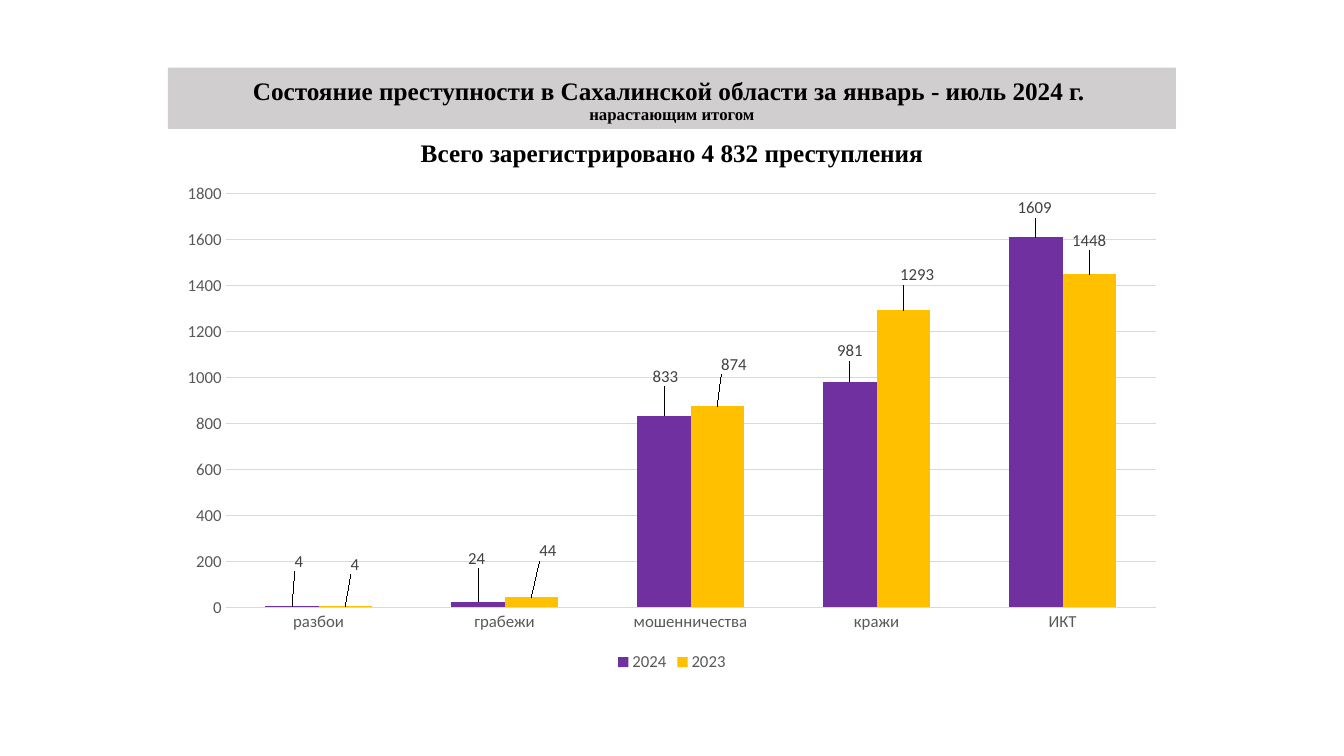
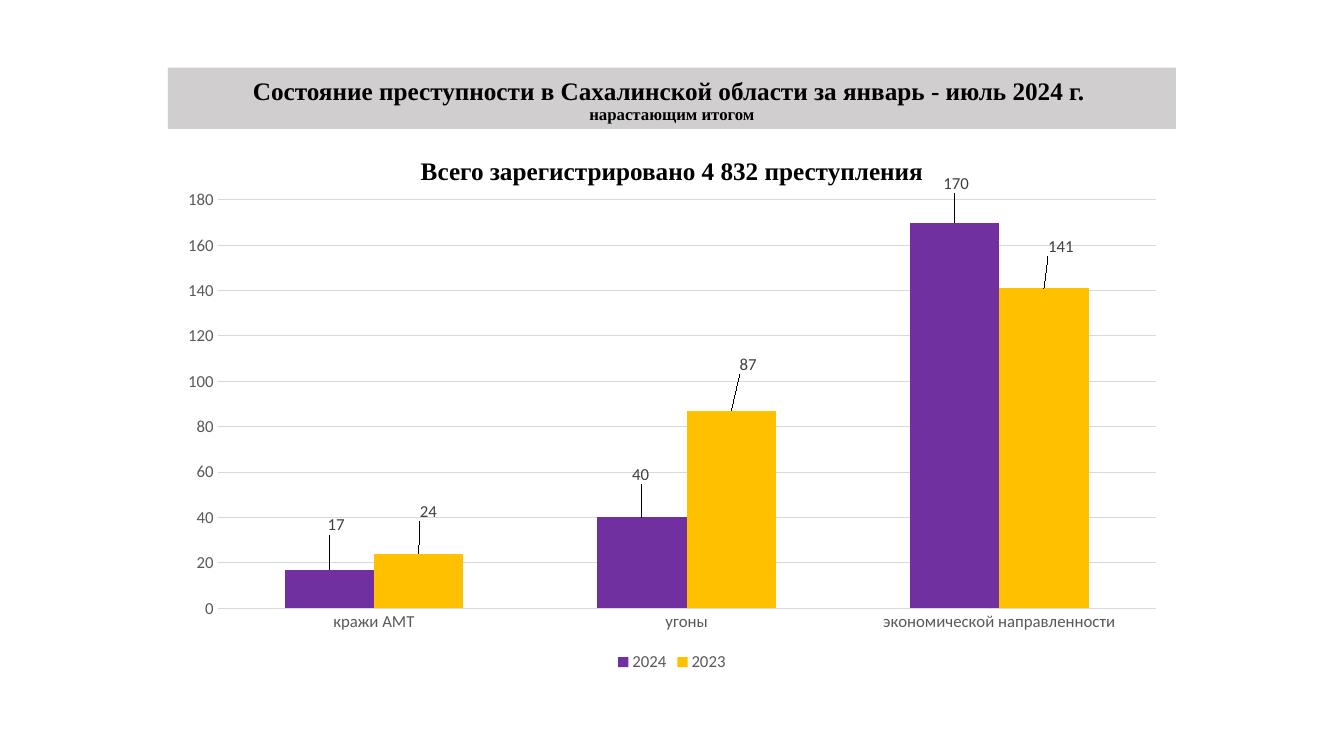
from lxml.etree import SubElement
from pptx import Presentation
from pptx.chart.data import CategoryChartData
from pptx.dml.color import RGBColor
from pptx.enum.chart import XL_CHART_TYPE, XL_LABEL_POSITION, XL_LEGEND_POSITION, XL_TICK_MARK
from pptx.enum.text import MSO_ANCHOR, MSO_AUTO_SIZE, PP_ALIGN
from pptx.oxml import parse_xml
from pptx.oxml.ns import nsdecls, qn
from pptx.util import Pt

BLACK = RGBColor(0x00, 0x00, 0x00)
BAND_GREY = RGBColor(0xD0, 0xCE, 0xCE)
GRID_GREY = RGBColor(0xD9, 0xD9, 0xD9)
AXIS_GREY = RGBColor(0x59, 0x59, 0x59)
LABEL_GREY = RGBColor(0x40, 0x40, 0x40)
PURPLE = RGBColor(0x70, 0x30, 0xA0)
GOLD = RGBColor(0xFF, 0xC0, 0x00)

HEADING_FONT, CHART_FONT = "Times New Roman", "Calibri"

HEADING = [
    ("Состояние преступности в Сахалинской области за январь - июль 2024 г. ", 18),
    ("нарастающим итогом", 12),
]
TOTAL = [("Всего зарегистрировано 4 832 преступления", 18)]

# Each year: bar colour and the shift (right, down) of its value labels in points
YEARS = {
    "2024": (PURPLE, [(5, -22), (-1, -21), (1, -18), (0, -12), (-1, -11)]),
    "2023": (GOLD, [(7, -20), (12, -23), (12, -20), (10, -15), (0, -14)]),
}

# plot: left, top, width, height in points inside the chart
SLIDES = [
    {
        "total_top": 98.5,
        "plot": (41.2, 14.3, 664.3, 295.7),
        "step": 200,
        "top_value": 1800,
        "crimes": {
            "разбои": (4, 4),
            "грабежи": (24, 44),
            "мошенничества": (833, 874),
            "кражи": (981, 1293),
            "ИКТ": (1609, 1448),
        },
    },
    {
        "total_top": 111.5,
        "plot": (35.5, 17.9, 670, 292.5),
        "step": 20,
        "top_value": 180,
        "crimes": {
            "кражи АМТ": (17, 24),
            "угоны": (40, 87),
            "экономической направленности": (170, 141),
        },
    },
]

LEFT, WIDTH = 120, 720
BAND_TOP, BAND_HEIGHT = 48.3, 43.7
TOTAL_HEIGHT = 26
CHART_TOP, CHART_HEIGHT = 124, 359


def style_font(font, size, color, name=CHART_FONT, bold=False):
    font.size, font.name, font.bold = Pt(size), name, bold
    font.color.rgb = color


def place_heading(placeholder, lines, top, height, anchor, line_spacing, space_before):
    placeholder.left, placeholder.top = Pt(LEFT), Pt(top)
    placeholder.width, placeholder.height = Pt(WIDTH), Pt(height)
    frame = placeholder.text_frame
    frame.text = "\n".join(text for text, _ in lines)
    frame.word_wrap = True
    frame.auto_size = MSO_AUTO_SIZE.NONE
    frame.vertical_anchor = anchor
    for paragraph, (_, size) in zip(frame.paragraphs, lines):
        paragraph.alignment = PP_ALIGN.CENTER
        paragraph.line_spacing = line_spacing
        paragraph.space_before = Pt(space_before)
        for run in paragraph.runs:
            style_font(run.font, size, BLACK, HEADING_FONT, bold=True)


def manual_layout(modes, lengths):
    """Chart layout element; lengths are points, stored as shares of the chart size."""
    layout = parse_xml(f"<c:layout {nsdecls('c')}><c:manualLayout/></c:layout>")
    shares = zip("xywh", lengths, (WIDTH, CHART_HEIGHT) * 2)
    values = modes + [(key, f"{length / full:.4f}") for key, length, full in shares]
    for key, value in values:
        SubElement(layout[0], qn(f"c:{key}")).set("val", value)
    return layout


def style_axes(chart, step, top_value):
    for axis in (chart.category_axis, chart.value_axis):
        axis.major_tick_mark = axis.minor_tick_mark = XL_TICK_MARK.NONE
        axis.format.line.fill.background()
        style_font(axis.tick_labels.font, 12, AXIS_GREY)
    values = chart.value_axis
    values.minimum_scale, values.maximum_scale = 0, top_value
    values.major_unit = step
    values.has_major_gridlines = True
    grid_line = values.major_gridlines.format.line
    grid_line.color.rgb = GRID_GREY
    grid_line.width = Pt(0.75)


def style_series(series, color, shifts):
    series.format.fill.solid()
    series.format.fill.fore_color.rgb = color
    series.invert_if_negative = False
    labels = series.data_labels
    labels.show_value = True
    style_font(labels.font, 12, LABEL_GREY)
    for index, shift in enumerate(shifts):
        label = series.points[index].data_label
        style_font(label.font, 12, LABEL_GREY)
        label.position = XL_LABEL_POSITION.OUTSIDE_END
    for label_xml, shift in zip(labels._element.findall(qn("c:dLbl")), shifts):
        label_xml.insert(1, manual_layout([], shift))


def add_crime_chart(slide, content):
    crimes = content["crimes"]
    data = CategoryChartData()
    data.categories = list(crimes)
    for year, counts in zip(YEARS, zip(*crimes.values())):
        data.add_series(year, counts)
    chart = slide.shapes.add_chart(
        XL_CHART_TYPE.COLUMN_CLUSTERED,
        Pt(LEFT), Pt(CHART_TOP), Pt(WIDTH), Pt(CHART_HEIGHT), data,
    ).chart
    style_font(chart.font, 10, BLACK)
    chart.has_title = False
    chart.has_legend = True
    chart.legend.position = XL_LEGEND_POSITION.BOTTOM
    chart.legend.include_in_layout = False
    style_font(chart.legend.font, 12, AXIS_GREY)
    style_axes(chart, content["step"], content["top_value"])

    columns = chart.plots[0]
    columns.gap_width, columns.overlap = 150, 0
    columns.vary_by_categories = False
    for series, (color, shifts) in zip(columns.series, YEARS.values()):
        style_series(series, color, shifts[:len(crimes)])

    plot_area = chart.element.find(f"{qn('c:chart')}/{qn('c:plotArea')}")
    for old_layout in plot_area.findall(qn("c:layout")):
        plot_area.remove(old_layout)
    modes = [("layoutTarget", "inner"), ("xMode", "edge"), ("yMode", "edge")]
    plot_area.insert(0, manual_layout(modes, content["plot"]))


def main():
    deck = Presentation()
    deck.slide_width, deck.slide_height = Pt(960), Pt(540)
    title_and_subtitle = deck.slide_layouts[0]
    for content in SLIDES:
        slide = deck.slides.add_slide(title_and_subtitle)
        band = slide.shapes.title
        place_heading(band, HEADING, BAND_TOP, BAND_HEIGHT, MSO_ANCHOR.BOTTOM, 0.9, 0)
        band.fill.solid()
        band.fill.fore_color.rgb = BAND_GREY
        place_heading(slide.placeholders[1], TOTAL, content["total_top"], TOTAL_HEIGHT,
                      MSO_ANCHOR.TOP, 0.8, 10)
        add_crime_chart(slide, content)
    deck.save("out.pptx")


if __name__ == "__main__":
    main()
